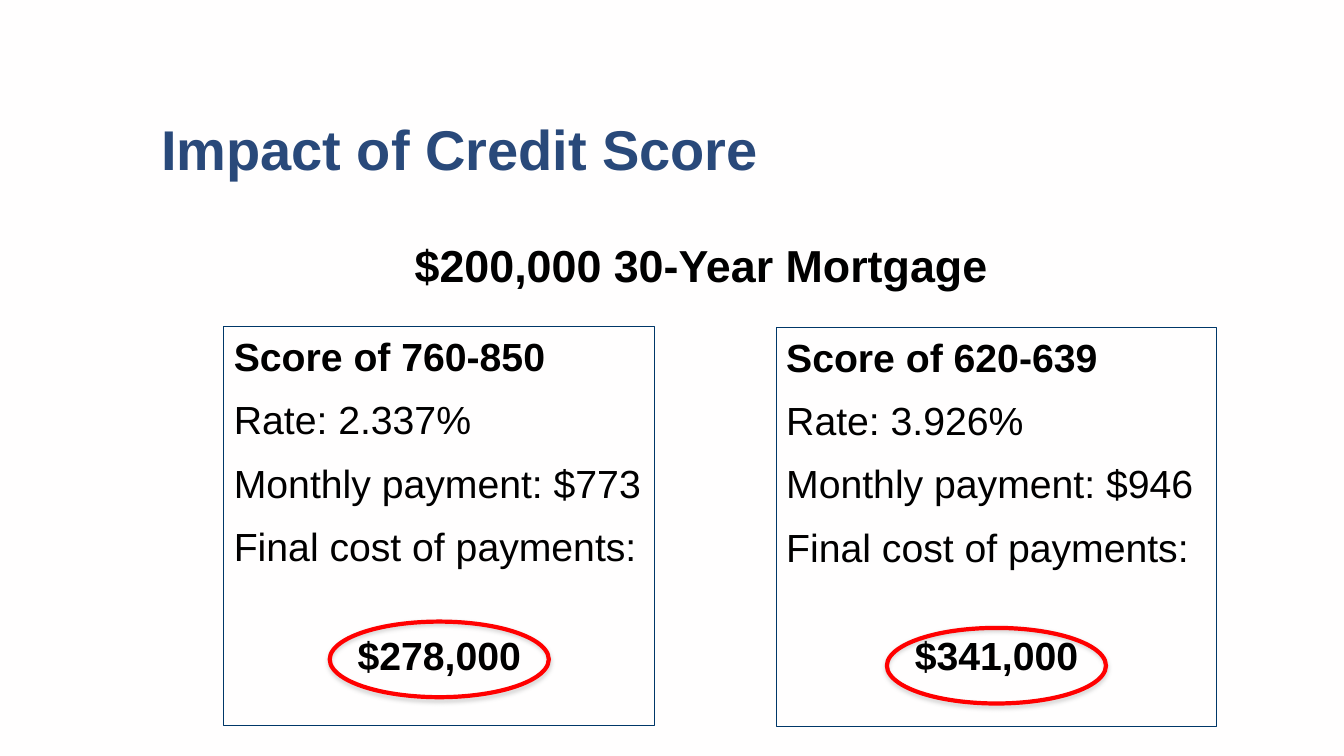
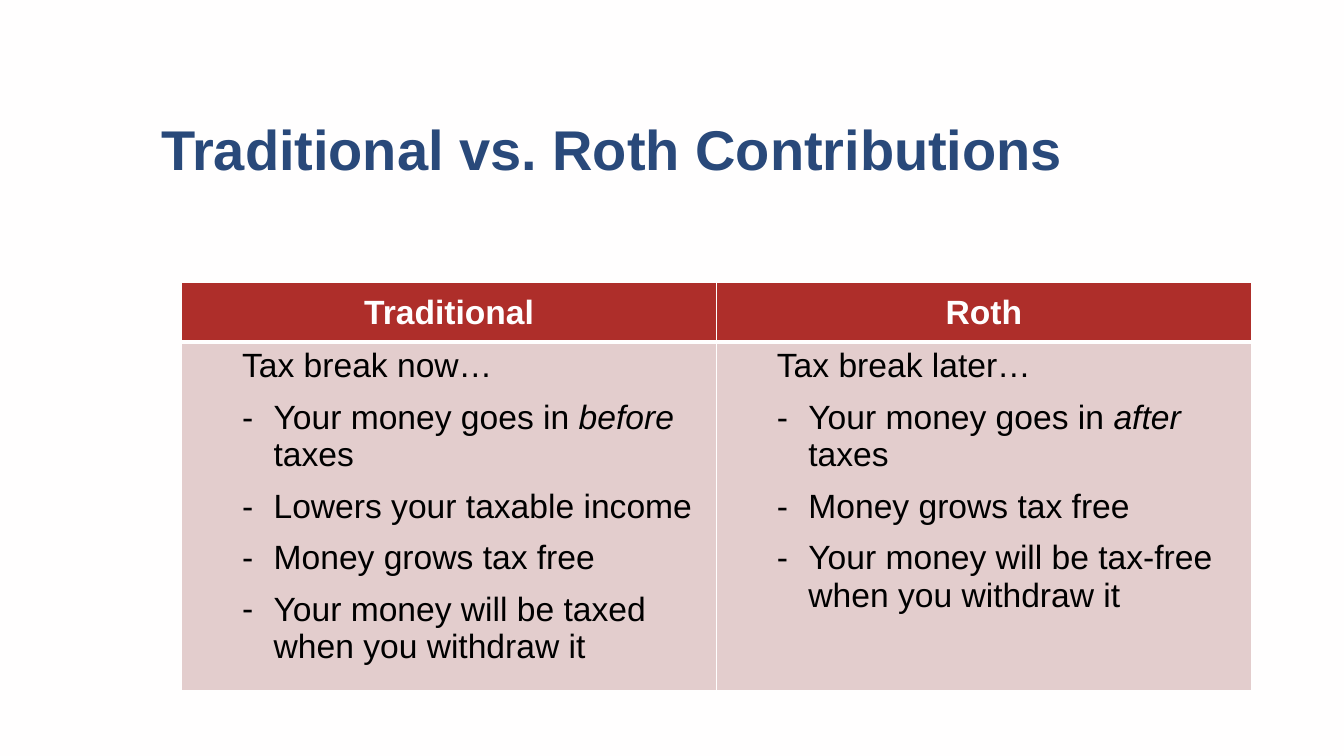
from lxml.etree import SubElement
from pptx import Presentation
from pptx.dml.color import RGBColor
from pptx.enum.shapes import MSO_SHAPE as Shape
from pptx.enum.text import MSO_ANCHOR as Anchor, PP_ALIGN as Align
from pptx.oxml.ns import qn
from pptx.util import Pt

FONT = "Arial"
PAPER, INK, NAVY, EDGE = "FFFEFE", "000000", "29497A", "003768"
BRICK, BLUSH, RED, GRAY = "AE2E2A", "E3CDCD", "FF0000", "808080"


def color(code):
    return RGBColor.from_string(code)


def style(para, size, code=INK, bold=False, align=Align.LEFT):
    para.alignment = align
    font = para.font
    font.name, font.size, font.bold = FONT, Pt(size), bold
    font.color.rgb = color(code)


def outline(slide, kind, box, code, width):
    """Add an unfilled shape with a coloured edge."""
    shape = slide.shapes.add_shape(kind, *map(Pt, box))
    shape.shadow.inherit = False
    shape.fill.background()
    shape.line.color.rgb = color(code)
    shape.line.width = Pt(width)
    return shape


def label(slide, box, text, size, code, align=Align.LEFT, anchor=Anchor.TOP):
    frame = slide.shapes.add_textbox(*map(Pt, box)).text_frame
    frame.word_wrap = True
    frame.vertical_anchor = anchor
    para = frame.paragraphs[0]
    para.text = text
    para.line_spacing = 0.9
    style(para, size, code, True, align)


def new_slide(deck, title):
    slide = deck.slides.add_slide(deck.slide_layouts[6])
    label(slide, (108, 56.5, 786, 104), title, 40, NAVY, anchor=Anchor.MIDDLE)
    return slide


def cast_shadow(shape):
    effects = shape._element.spPr.find(qn("a:effectLst"))
    outer = SubElement(effects, qn("a:outerShdw"), blurRad=str(Pt(3.1)),
                       dist=str(Pt(1.8)), dir="5400000", rotWithShape="0")
    tint = SubElement(outer, qn("a:srgbClr"), val=GRAY)
    SubElement(tint, qn("a:alpha"), val="35000")


def score_card(slide, box, drop, facts, total):
    """List the loan facts in a frame and ring the total, drop below its top."""
    left, top, width, _ = box
    frame = outline(slide, Shape.RECTANGLE, box, EDGE, 0.75).text_frame
    frame.word_wrap = True
    frame.vertical_anchor = Anchor.TOP
    frame.margin_top = Pt(4)
    lines = [*facts, total]
    for i, text in enumerate(lines):
        para = frame.paragraphs[0] if i == 0 else frame.add_paragraph()
        last = i == len(lines) - 1
        para.text = text
        para.space_before = Pt(44 if last else 11.6 if i else 0)
        style(para, 28, bold=i == 0 or last,
              align=Align.CENTER if last else Align.LEFT)
    ring_w, ring_h = 156.5, 54
    ring = (left + (width - ring_w) / 2, top + drop, ring_w, ring_h)
    cast_shadow(outline(slide, Shape.OVAL, ring, RED, 3))


def border(cell, **widths):
    """Draw the cell's edges; widths are keyed L, R, T, B in that order."""
    props = cell._tc.get_or_add_tcPr()
    for i, (side, width) in enumerate(widths.items()):
        line = SubElement(props, qn("a:ln" + side), w=str(Pt(width)))
        fill = SubElement(line, qn("a:solidFill"))
        SubElement(fill, qn("a:srgbClr"), val=PAPER)
        props.insert(i, line)


def paint(cell, code):
    cell.fill.solid()
    cell.fill.fore_color.rgb = color(code)


def head_cell(cell, text):
    paint(cell, BRICK)
    border(cell, L=1, R=1, T=1, B=3)
    cell.vertical_anchor = Anchor.MIDDLE
    para = cell.text_frame.paragraphs[0]
    para.text = text
    style(para, 24, PAPER, True, Align.CENTER)


def list_cell(cell, lines):
    """Write a lead line and dashed points; *stars* mark italics."""
    paint(cell, BLUSH)
    border(cell, L=1, R=1, T=3, B=1)
    frame = cell.text_frame
    for i, text in enumerate(lines):
        para = frame.add_paragraph() if i else frame.paragraphs[0]
        props = para._p.get_or_add_pPr()
        props.set("marL", str(Pt(58.5 if i else 36)))
        props.set("indent", str(Pt(-22.5 if i else 0)))
        if i:
            SubElement(props, qn("a:buFont"), typeface=FONT)
            SubElement(props, qn("a:buChar"), char="-")
            para.space_before = Pt(10)
        style(para, 24)
        for j, part in enumerate(text.split("*")):
            run = para.add_run()
            run.text = part
            if j % 2:
                run.font.italic = True


def compare(slide, box, columns):
    left, top, width, height = box
    table = slide.shapes.add_table(2, len(columns), *map(Pt, box)).table
    table.horz_banding = False
    head = 42.5
    table.rows[0].height, table.rows[1].height = Pt(head), Pt(height - head)
    for i, (name, lines) in enumerate(columns.items()):
        table.columns[i].width = Pt(width / len(columns))
        head_cell(table.cell(0, i), name)
        list_cell(table.cell(1, i), lines)


def score_slide(deck):
    slide = new_slide(deck, "Impact of Credit Score")
    label(slide, (108, 170.5, 786, 50), "$200,000 30-Year Mortgage", 32, INK,
          Align.CENTER)
    cards = [
        ((160, 233.5, 307.5, 285), 210.5, "760-850", "2.337%", "$773",
         "$278,000"),
        ((554.5, 234, 314.5, 285), 214.5, "620-639", "3.926%", "$946",
         "$341,000"),
    ]
    for box, drop, score, rate, pay, total in cards:
        facts = (f"Score of {score}", f"Rate: {rate}",
                 f"Monthly payment: {pay}", "Final cost of payments:")
        score_card(slide, box, drop, facts, total)


def plan_slide(deck):
    slide = new_slide(deck, "Traditional vs. Roth Contributions")
    compare(slide, (129.75, 202, 764, 270), {
        "Traditional": (
            "Tax break now…",
            "Your money goes in *before* taxes",
            "Lowers your taxable income",
            "Money grows tax free",
            "Your money will be taxed when you withdraw it",
        ),
        "Roth": (
            "Tax break later…",
            "Your money goes in *after* taxes",
            "Money grows tax free",
            "Your money will be tax-free when you withdraw it",
        ),
    })


def main():
    deck = Presentation()
    deck.slide_width, deck.slide_height = Pt(960), Pt(540)
    back = deck.slide_master.background.fill
    back.solid()
    back.fore_color.rgb = color(PAPER)
    score_slide(deck)
    plan_slide(deck)
    deck.save("out.pptx")


if __name__ == "__main__":
    main()
